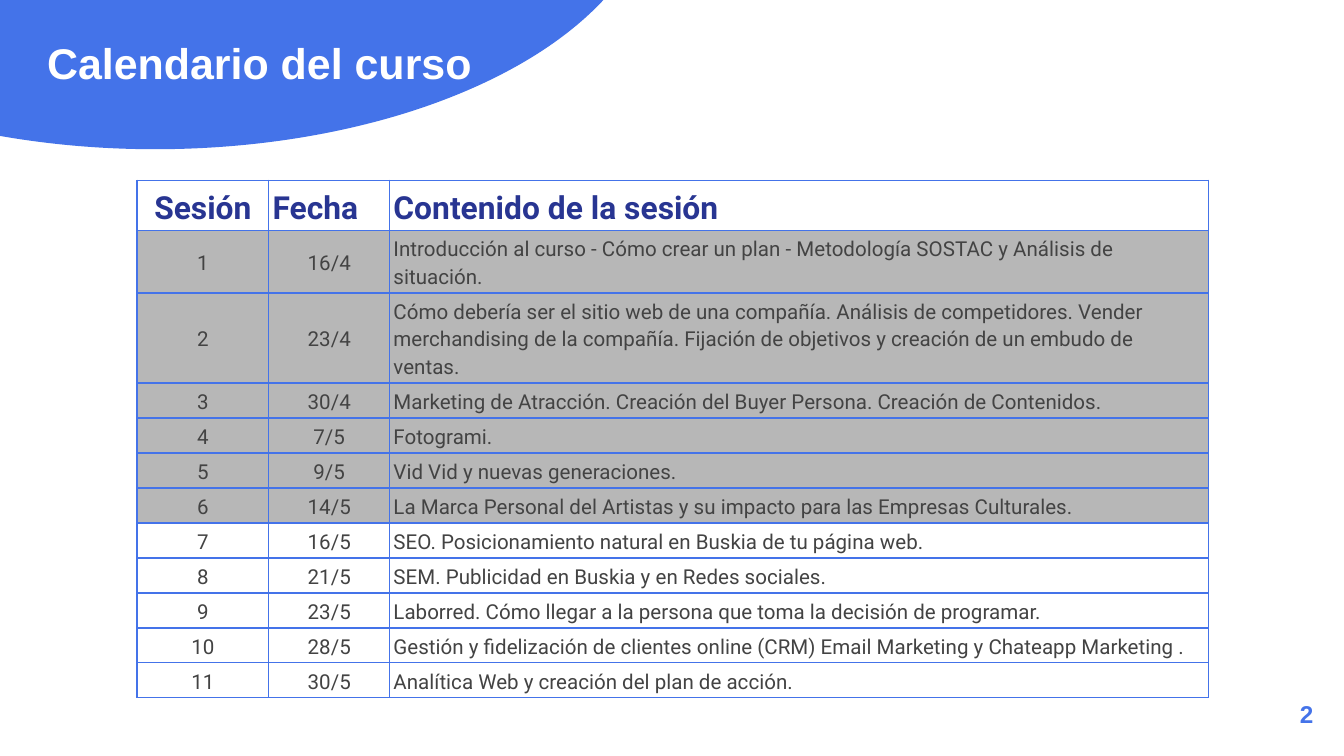
import pptx
import pptx.dml.color
import pptx.enum.shapes
import pptx.enum.text
import pptx.oxml
import pptx.oxml.ns
import pptx.util

Inches = pptx.util.Inches
Pt = pptx.util.Pt
ALIGN = pptx.enum.text.PP_ALIGN
ANCHOR = pptx.enum.text.MSO_ANCHOR

WIDTH = 10
HEIGHT = WIDTH * 9 / 16
BLUE, NAVY, GREY_TEXT = "4473E9", "283592", "434343"
DONE_FILL, WHITE = "B7B7B7", "FFFFFF"
COLUMN_WIDTHS = [0.98, 0.9, 6.09]
ROW_HEIGHT = 0.25  # rows grow to fit their text
DONE_SESSIONS = 6  # sessions already held are shaded

HEADER = ("Sesión", "Fecha", "Contenido de la sesión")
SESSIONS = [
    ("16/4", "Introducción al curso - Cómo crear un plan - Metodología SOSTAC y "
             "Análisis de situación."),
    ("23/4", "Cómo debería ser el sitio web de una compañía. Análisis de competidores. "
             "Vender merchandising de la compañía. Fijación de objetivos y creación de "
             "un embudo de ventas."),
    ("30/4", "Marketing de Atracción. Creación del Buyer Persona. Creación de Contenidos."),
    ("7/5", "Fotogrami."),
    ("9/5", "Vid Vid y nuevas generaciones."),
    ("14/5", "La Marca Personal del Artistas y su impacto para las Empresas Culturales."),
    ("16/5", "SEO. Posicionamiento natural en Buskia de tu página web."),
    ("21/5", "SEM. Publicidad en Buskia y en Redes sociales."),
    ("23/5", "Laborred. Cómo llegar a la persona que toma la decisión de programar."),
    ("28/5", "Gestión y fidelización de clientes online (CRM) Email Marketing y "
             "Chateapp Marketing ."),
    ("30/5", "Analítica Web y creación del plan de acción."),
]


def color(hex_string):
    return pptx.dml.color.RGBColor.from_string(hex_string)


def set_text(text_frame, text, font_name, size, text_color, bold, align):
    text_frame.text = text
    text_frame.word_wrap = True
    paragraph = text_frame.paragraphs[0]
    paragraph.alignment = align
    font = paragraph.font
    font.name, font.size, font.bold = font_name, Pt(size), bold
    font.color.rgb = color(text_color)
    return paragraph


def set_heading(shape, text, size, text_color, align):
    """Arial bold text, centred vertically with even insets."""
    frame = shape.text_frame
    set_text(frame, text, "Arial", size, text_color, True, align)
    frame.auto_size = pptx.enum.text.MSO_AUTO_SIZE.NONE
    frame.vertical_anchor = ANCHOR.MIDDLE
    frame.margin_left = frame.margin_right = Inches(0.1)
    frame.margin_top = frame.margin_bottom = Inches(0.1)


def add_title(slide, text):
    title = slide.shapes.title
    title.left, title.top = Inches(0.25), Inches(0.13)
    title.width, title.height = Inches(3.45), Inches(0.67)
    set_heading(title, text, 23, WHITE, ALIGN.LEFT)


def add_corner_ellipse(slide):
    ellipse = slide.shapes.add_shape(
        pptx.enum.shapes.MSO_SHAPE.OVAL,
        Inches(-2.58), Inches(-2.93), Inches(7.47), Inches(4.04))
    ellipse.shadow.inherit = False
    ellipse.fill.solid()
    ellipse.fill.fore_color.rgb = color(BLUE)
    ellipse.line.fill.background()
    # Place it behind the title
    slide.shapes.title.element.addprevious(ellipse.element)


def add_page_number(slide, number):
    box = slide.shapes.add_textbox(Inches(9.27), Inches(5.1), Inches(0.6), Inches(0.43))
    set_heading(box, number, 13, BLUE, ALIGN.RIGHT)


def set_borders(cell, line_color, points):
    properties = cell._tc.get_or_add_tcPr()
    for side in ("lnL", "lnR", "lnT", "lnB"):
        properties.append(pptx.oxml.parse_xml(
            f'<a:{side} {pptx.oxml.ns.nsdecls("a")} w="{Pt(points)}">'
            f'<a:solidFill><a:srgbClr val="{line_color}"/></a:solidFill></a:{side}>'))


def format_cell(cell, text, size, text_color, bold, align, fill=None):
    paragraph = set_text(cell.text_frame, text, "Roboto", size, text_color, bold, align)
    paragraph.line_spacing = 1.15
    cell.vertical_anchor = ANCHOR.MIDDLE
    cell.margin_left = cell.margin_right = Pt(2)
    cell.margin_top = cell.margin_bottom = Pt(2)
    set_borders(cell, BLUE, 0.75)
    if fill:
        cell.fill.solid()
        cell.fill.fore_color.rgb = color(fill)
    else:
        cell.fill.background()


def add_calendar(slide):
    row_count = len(SESSIONS) + 1
    table = slide.shapes.add_table(
        row_count, len(COLUMN_WIDTHS), Inches(1.02), Inches(1.34),
        Inches(sum(COLUMN_WIDTHS)), Inches(ROW_HEIGHT * row_count)).table
    table.first_row = table.horz_banding = False
    for column, width in zip(table.columns, COLUMN_WIDTHS):
        column.width = Inches(width)

    # Header
    for index, (text, align) in enumerate(zip(HEADER, (ALIGN.CENTER, ALIGN.LEFT, ALIGN.LEFT))):
        format_cell(table.cell(0, index), text, 17, NAVY, True, align)
    table.cell(0, 0).vertical_anchor = ANCHOR.BOTTOM

    # Sessions
    for number, (date, content) in enumerate(SESSIONS, start=1):
        fill = DONE_FILL if number <= DONE_SESSIONS else None
        for index, text in enumerate((str(number), date, content)):
            align = ALIGN.LEFT if index == 2 else ALIGN.CENTER
            format_cell(table.cell(number, index), text, 11, GREY_TEXT, False, align, fill)


def main():
    presentation = pptx.Presentation()
    presentation.slide_width = Inches(WIDTH)
    presentation.slide_height = Inches(HEIGHT)
    slide = presentation.slides.add_slide(presentation.slide_layouts[5])
    add_corner_ellipse(slide)
    add_page_number(slide, "2")
    add_title(slide, "Calendario del curso")
    add_calendar(slide)
    presentation.save("out.pptx")


if __name__ == "__main__":
    main()
